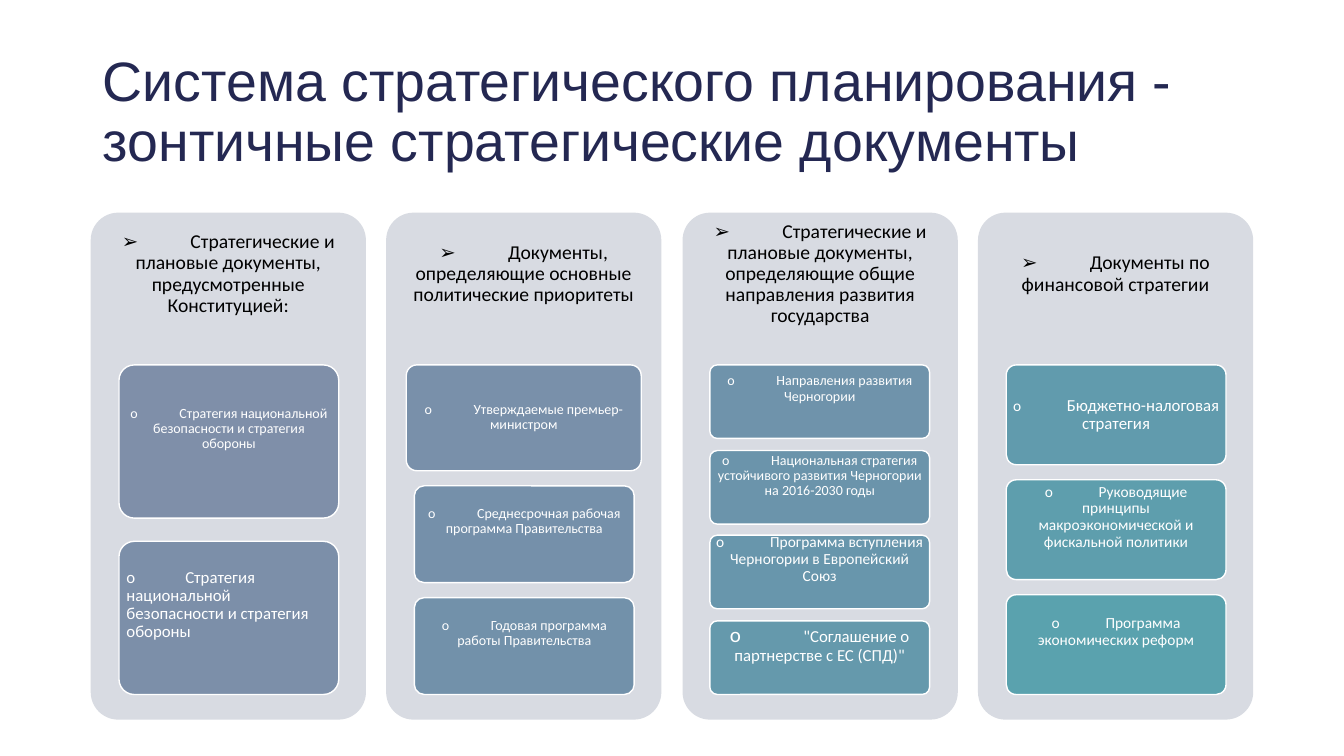
from dataclasses import dataclass

from lxml import etree
from pptx import Presentation
from pptx.dml.color import RGBColor
from pptx.enum.shapes import MSO_SHAPE
from pptx.enum.text import MSO_ANCHOR, MSO_AUTO_SIZE, PP_ALIGN
from pptx.oxml.ns import qn
from pptx.util import Emu, Pt

ROUNDED = MSO_SHAPE.ROUNDED_RECTANGLE
MIDDLE = MSO_ANCHOR.MIDDLE
NO_FIT = MSO_AUTO_SIZE.NONE
LEFT, CENTER = PP_ALIGN.LEFT, PP_ALIGN.CENTER

EMU_PER_PX = 9144
TITLE_ONLY = 5
COLORS = {"title": "242852", "panel": "D8DBE2", "heading": "000000", "white": "FFFFFF"}
TITLE = "Система стратегического планирования - зонтичные стратегические документы"
TITLE_BOX = (92, 40, 1150, 145)
COLUMNS_BOX = (90, 211, 1153, 503)
PANEL_W, HEADING_H, STACK_H = 273, 151, 327
CARD_W = 218
GAP_RATIO = 0.154


@dataclass
class Card:
    """One document: text, fill, text and bullet sizes, space below and scale."""
    text: str
    fill: str
    size: int = 10
    bullet_size: int = 0
    below: int = 25
    align: PP_ALIGN = CENTER
    width: int = CARD_W
    weight: float = 1


COLUMNS = [
    ("Стратегические и плановые документы, предусмотренные Конституцией:", [
        Card("Стратегия национальной безопасности и стратегия обороны", "7F8FA9"),
        Card("Стратегия национальной безопасности и стратегия обороны", "7C8FA9",
             size=12, align=LEFT),
    ]),
    ("Документы, определяющие основные политические приоритеты", [
        Card("Утверждаемые премьер-министром", "7990AA", below=0, width=233, weight=1.09),
        Card("Среднесрочная рабочая программа Правительства", "7590AA"),
        Card("Годовая программа работы Правительства", "7291AA"),
    ]),
    ("Стратегические и плановые документы, определяющие общие направления "
     "развития государства", [
        Card("Направления развития Черногории", "6F93AB"),
        Card("Национальная стратегия устойчивого развития Черногории на 2016-2030 годы",
             "6B94AB", below=23),
        Card("Программа вступления Черногории в Европейский Союз", "6896AC", size=11),
        Card("\"Соглашение о партнерстве с ЕС (СПД)\"", "6599AC", size=12, bullet_size=15),
    ]),
    ("Документы по финансовой стратегии", [
        Card("Бюджетно-налоговая стратегия", "619BAD", size=12, bullet_size=11, below=0),
        Card("Руководящие принципы макроэкономической и фискальной политики",
             "5E9EAD", size=11),
        Card("Программа экономических реформ", "5AA2AE", size=11),
    ]),
]


def px(*lengths):
    """Turn lengths in px into EMU."""
    return [Emu(round(n) * EMU_PER_PX) for n in lengths]


def rgb(color):
    """Turn a hex string into a colour."""
    return RGBColor.from_string(color)


def add_run(p, text, size, color, font="Calibri"):
    """Add one formatted run to a paragraph."""
    r = p.add_run()
    r.text = text
    r.font.size = Pt(size)
    r.font.name = font
    r.font.color.rgb = rgb(color)


def set_frame(tf, side, below=0):
    """Wrap and centre a text frame, with extra space below the text."""
    tf.word_wrap = True
    tf.auto_size = NO_FIT
    tf.vertical_anchor = MIDDLE
    tf.margin_left, tf.margin_top, tf.margin_right, tf.margin_bottom = px(
        side, side, side, side + below)


def add_item(tf, bullet, text, size, bullet_size, color, align):
    """Write a marker, a tab and the text as one paragraph."""
    p = tf.paragraphs[0]
    tabs = etree.SubElement(p._p.get_or_add_pPr(), qn("a:tabLst"))
    etree.SubElement(tabs, qn("a:tab"), pos=str(Pt(3.5 * bullet_size)), algn="l")
    p.alignment = align
    p.line_spacing = 0.9
    add_run(p, bullet + "\t", bullet_size, color)
    add_run(p, text, size, color)


def add_rounded(s, box, fill):
    """Add a plain rounded rectangle."""
    sp = s.shapes.add_shape(ROUNDED, *px(*box))
    sp.adjustments[0] = 0.1
    sp.shadow.inherit = False
    sp.fill.solid()
    sp.fill.fore_color.rgb = rgb(fill)
    sp.line.fill.background()
    return sp


def add_title(s, box):
    """Place and format the title."""
    sp = s.shapes.title
    sp.left, sp.top, sp.width, sp.height = px(*box)
    tf = sp.text_frame
    tf.word_wrap = True
    tf.auto_size = NO_FIT
    tf.vertical_anchor = MIDDLE
    p = tf.paragraphs[0]
    p.alignment = LEFT
    p.line_spacing = 0.9
    add_run(p, TITLE, 39.6, COLORS["title"], "Arial")


def add_card(s, box, card):
    """Draw one document card."""
    sp = add_rounded(s, box, card.fill)
    sp.line.color.rgb = rgb(COLORS["white"])
    sp.line.width = Pt(1)
    set_frame(sp.text_frame, 3, card.below)
    add_item(sp.text_frame, "o", card.text, card.size, card.bullet_size or card.size,
             COLORS["white"], card.align)


def add_column(s, box, heading, cards):
    """Draw a panel with its heading and a stack of cards."""
    x, y, w, h = box
    add_rounded(s, box, COLORS["panel"])
    tf = s.shapes.add_textbox(*px(x, y, w, HEADING_H)).text_frame
    set_frame(tf, 6, 29)
    add_item(tf, "➢", heading, 14, 14, COLORS["heading"], CENTER)
    unit = STACK_H / (sum(c.weight for c in cards) + GAP_RATIO * (len(cards) - 1))
    top = y + HEADING_H
    for card in cards:
        height = unit * card.weight
        add_card(s, (x + (w - card.width) / 2, top, card.width, height), card)
        top += height + unit * GAP_RATIO


def add_columns(s, box):
    """Spread the columns evenly over the box."""
    x, y, w, h = box
    step = (w - PANEL_W) / (len(COLUMNS) - 1)
    for i, (heading, cards) in enumerate(COLUMNS):
        add_column(s, (x + i * step, y, PANEL_W, h), heading, cards)


def main():
    """Build and save the slide."""
    prs = Presentation()
    prs.slide_width, prs.slide_height = px(1333, 750)
    s = prs.slides.add_slide(prs.slide_layouts[TITLE_ONLY])
    add_title(s, TITLE_BOX)
    add_columns(s, COLUMNS_BOX)
    prs.save("out.pptx")


if __name__ == "__main__":
    main()
